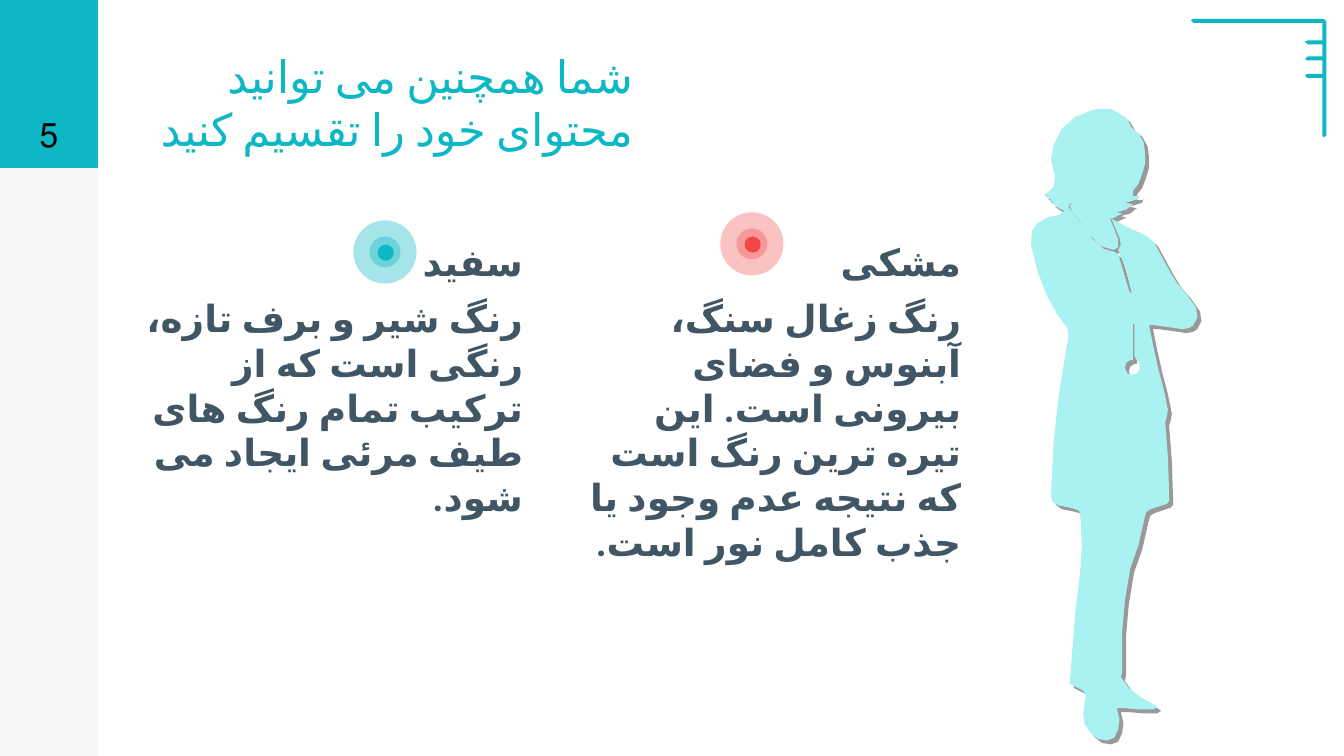
from pptx import Presentation
from pptx.dml.color import RGBColor
from pptx.enum.lang import MSO_LANGUAGE_ID
from pptx.enum.shapes import MSO_SHAPE
from pptx.enum.text import MSO_ANCHOR, PP_ALIGN
from pptx.oxml.ns import qn
from pptx.util import Pt
from lxml import etree

PX = 9144  # EMU per px, 100 px to the inch
SLIDE_WIDTH, SLIDE_HEIGHT = Pt(720), Pt(405)
SIDEBAR = 73
INSET = 10

TEAL = RGBColor(0x0D, 0xB7, 0xC4)
RED = RGBColor(0xF2, 0x47, 0x45)
AQUA = RGBColor(0xAA, 0xF1, 0xF1)
PALE = RGBColor(0xF6, 0xF6, 0xF6)
SLATE = RGBColor(0x41, 0x56, 0x65)
BLACK = RGBColor(0, 0, 0)

RECTANGLE, OVAL = MSO_SHAPE.RECTANGLE, MSO_SHAPE.OVAL
TOP, BOTTOM = MSO_ANCHOR.TOP, MSO_ANCHOR.BOTTOM
RIGHT, CENTER = PP_ALIGN.RIGHT, PP_ALIGN.CENTER
PERSIAN = MSO_LANGUAGE_ID.FARSI

BRACKET = [
    (984, 58), (973, 58), (971, 56), (973, 55), (984, 55),
    (984, 45), (973, 45), (971, 44), (973, 42), (984, 42),
    (984, 33), (973, 33), (971, 31), (973, 30), (984, 30),
    (984, 17), (888, 17), (886, 15), (888, 14), (985, 14),
    (987, 16), (987, 101), (985, 102), (984, 101),
]

FIGURE = [
    # Head and hair, right side
    (826, 81), (832, 84), (838, 88), (841, 93), (842, 95), (847, 99),
    (851, 106), (852, 114), (852, 122), (850, 129), (847, 137), (843, 142),
    (843, 146), (847, 146), (848, 145), (847, 148), (844, 149), (837, 151),
    (843, 152), (838, 156), (831, 158), (835, 159), (827, 163),
    # Shoulder, folded arm and coat
    (843, 171), (850, 174), (855, 177), (859, 181), (871, 203), (876, 211),
    (883, 219), (890, 229), (891, 236), (888, 242), (885, 244), (880, 245),
    (859, 242), (855, 242), (858, 257), (862, 275), (866, 290), (869, 305),
    (868, 311), (867, 314), (869, 340), (870, 370), (870, 373), (868, 375),
    (856, 379), (853, 381), (852, 384),
    # Legs and shoes
    (847, 406), (841, 423), (837, 447), (835, 470), (835, 500), (834, 504),
    (840, 512), (849, 519), (858, 524), (861, 526), (858, 528), (848, 528),
    (837, 527), (831, 527), (833, 535), (832, 543), (829, 549), (824, 551),
    (817, 550), (812, 546), (807, 539), (806, 531), (808, 517), (806, 514),
    (796, 509), (797, 495), (800, 457), (804, 423), (805, 405), (804, 386),
    (803, 380), (797, 378),
    # Coat, arm and hair, left side
    (787, 376), (783, 373), (782, 369), (784, 329), (788, 293), (795, 250),
    (794, 244), (786, 233), (779, 220), (772, 202), (767, 182), (768, 172),
    (772, 166), (779, 162), (788, 160), (792, 157), (788, 155), (782, 151),
    (785, 151), (781, 149), (783, 148), (780, 148), (777, 145), (780, 143),
    (784, 139), (785, 131), (782, 119), (784, 108), (790, 96), (800, 87),
    (813, 82), (818, 81),
]

STETHOSCOPE_END = [
    (843, 268), (841, 268), (838, 270), (837, 274), (839, 278), (842, 279),
    (846, 278), (848, 275), (848, 271), (846, 268), (844, 265), (844, 241),
    (843, 241),
]

STETHOSCOPE_TUBE = [
    (841, 218), (842, 218), (838, 201), (833, 188), (832, 186), (834, 182),
    (833, 177), (827, 163), (826, 162), (826, 163), (832, 178), (832, 184),
    (829, 186), (825, 185), (819, 183), (817, 181), (811, 175), (803, 164),
    (797, 156), (796, 153), (799, 151), (796, 152), (795, 154), (798, 158),
    (813, 178), (820, 185), (828, 187), (832, 189), (840, 216),
]


class SlideBuilder:
    def __init__(self, slide):
        self.slide = slide

    def paint(self, shape, color, alpha=None):
        shape.shadow.inherit = False
        shape.fill.solid()
        shape.fill.fore_color.rgb = color
        shape.line.fill.background()
        if alpha is not None:
            node = shape.fill._xPr.find(".//" + qn("a:srgbClr"))
            etree.SubElement(node, qn("a:alpha"), val=str(alpha * 1000))

    def shape(self, kind, left, top, width, height, color, alpha=None):
        shape = self.slide.shapes.add_shape(
            kind, left * PX, top * PX, width * PX, height * PX)
        self.paint(shape, color, alpha)
        return shape

    def target(self, center_x, center_y, color, alpha):
        for size, opacity in ((47, alpha), (23, alpha), (12, None)):
            corner = (size + 1) // 2
            self.shape(OVAL, center_x - corner, center_y - corner,
                       size, size, color, opacity)

    def outline(self, contours, color):
        first, *others = contours
        builder = self.slide.shapes.build_freeform(*first[0], scale=PX)
        builder.add_line_segments(first[1:])
        for contour in others:
            builder.move_to(*contour[0])
            builder.add_line_segments(contour[1:])
        shape = builder.convert_to_shape()
        self.paint(shape, color)
        return shape

    def drop_shadow(self, shape):
        effects = shape._element.spPr.find(qn("a:effectLst"))
        shadow = etree.SubElement(
            effects, qn("a:outerShdw"), blurRad="0", dist=str(Pt(3)),
            dir=str(45 * 60000), algn="bl", rotWithShape="0")
        black = etree.SubElement(shadow, qn("a:srgbClr"), val=str(BLACK))
        etree.SubElement(black, qn("a:alpha"), val="40000")

    def text(self, left, top, width, height, paragraphs, font, size, color,
             bold=False, anchor=TOP, align=RIGHT, space_before=0,
             persian=True):
        box = self.slide.shapes.add_textbox(
            left * PX, top * PX, width * PX, height * PX)
        frame = box.text_frame
        frame.word_wrap = True
        frame.vertical_anchor = anchor
        frame.margin_left = frame.margin_right = INSET * PX
        frame.margin_top = frame.margin_bottom = INSET * PX
        frame.text = "\n".join(paragraphs)
        for para in frame.paragraphs:
            para.alignment = align
            para.space_before = Pt(space_before)
            para.font.name = font
            para.font.size = Pt(size)
            para.font.bold = bold
            para.font.color.rgb = color
            para._p.get_or_add_pPr().set("rtl", "1")
            if persian:
                self.persian_script(para, font)

    def persian_script(self, para, font):
        for span in para.runs:
            span.font.language_id = PERSIAN
            etree.SubElement(span._r.get_or_add_rPr(), qn("a:cs"),
                             typeface=font)


def main():
    deck = Presentation()
    deck.slide_width, deck.slide_height = SLIDE_WIDTH, SLIDE_HEIGHT
    page = SlideBuilder(deck.slides.add_slide(deck.slide_layouts[6]))

    # Sidebar and corner ornament
    sidebar = page.shape(RECTANGLE, 0, 0, SIDEBAR, 562, PALE)
    sidebar.height = SLIDE_HEIGHT
    page.shape(RECTANGLE, 0, 0, SIDEBAR, 125, TEAL)
    page.outline([BRACKET], TEAL)

    # Title and page number
    page.text(92, 1, 389, 125, ["شما همچنین می توانید محتوای خود را تقسیم کنید"],
              "Calibri", 24, TEAL, anchor=BOTTOM)
    page.text(0, 0, SIDEBAR, 125, ["5"], "Calibri", 18, BLACK,
              anchor=BOTTOM, align=CENTER, persian=False)

    # Two columns
    columns = (
        (92, "سفید", "رنگ شیر و برف تازه، رنگی است که از ترکیب تمام رنگ های "
                     "طیف مرئی ایجاد می شود."),
        (418, "مشکی", "رنگ زغال سنگ، آبنوس و فضای بیرونی است. این تیره ترین رنگ "
                      "است که نتیجه عدم وجود یا جذب کامل نور است."),
    )
    for left, heading, body in columns:
        page.text(left, 168, 307, 363, [heading, body], "Roboto", 20, SLATE,
                  bold=True, space_before=6)

    # Target markers
    page.target(287, 188, TEAL, 37)
    page.target(560, 182, RED, 33)

    # Standing doctor
    doctor = page.outline([FIGURE, STETHOSCOPE_END, STETHOSCOPE_TUBE], AQUA)
    page.drop_shadow(doctor)

    deck.save("out.pptx")


if __name__ == "__main__":
    main()
